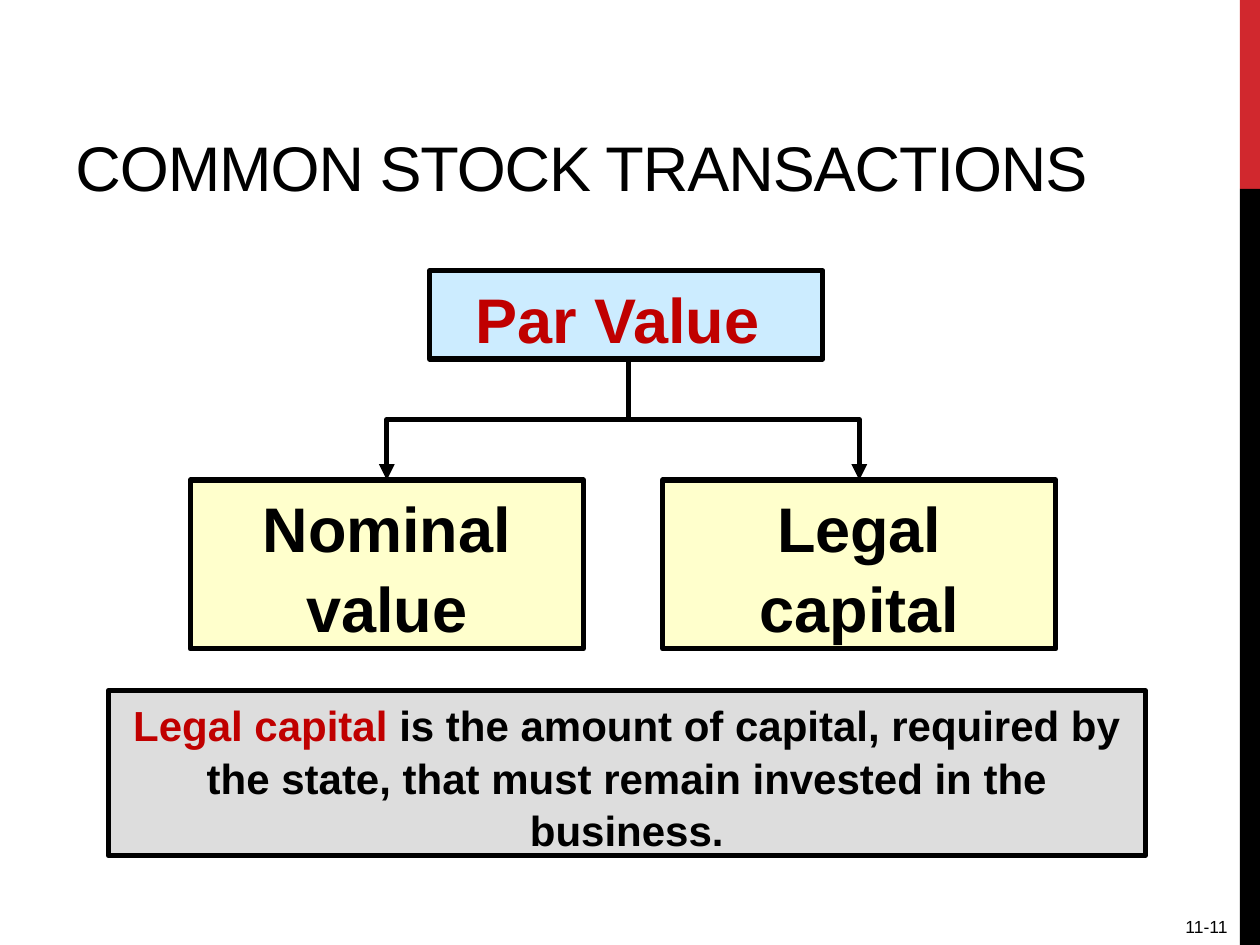
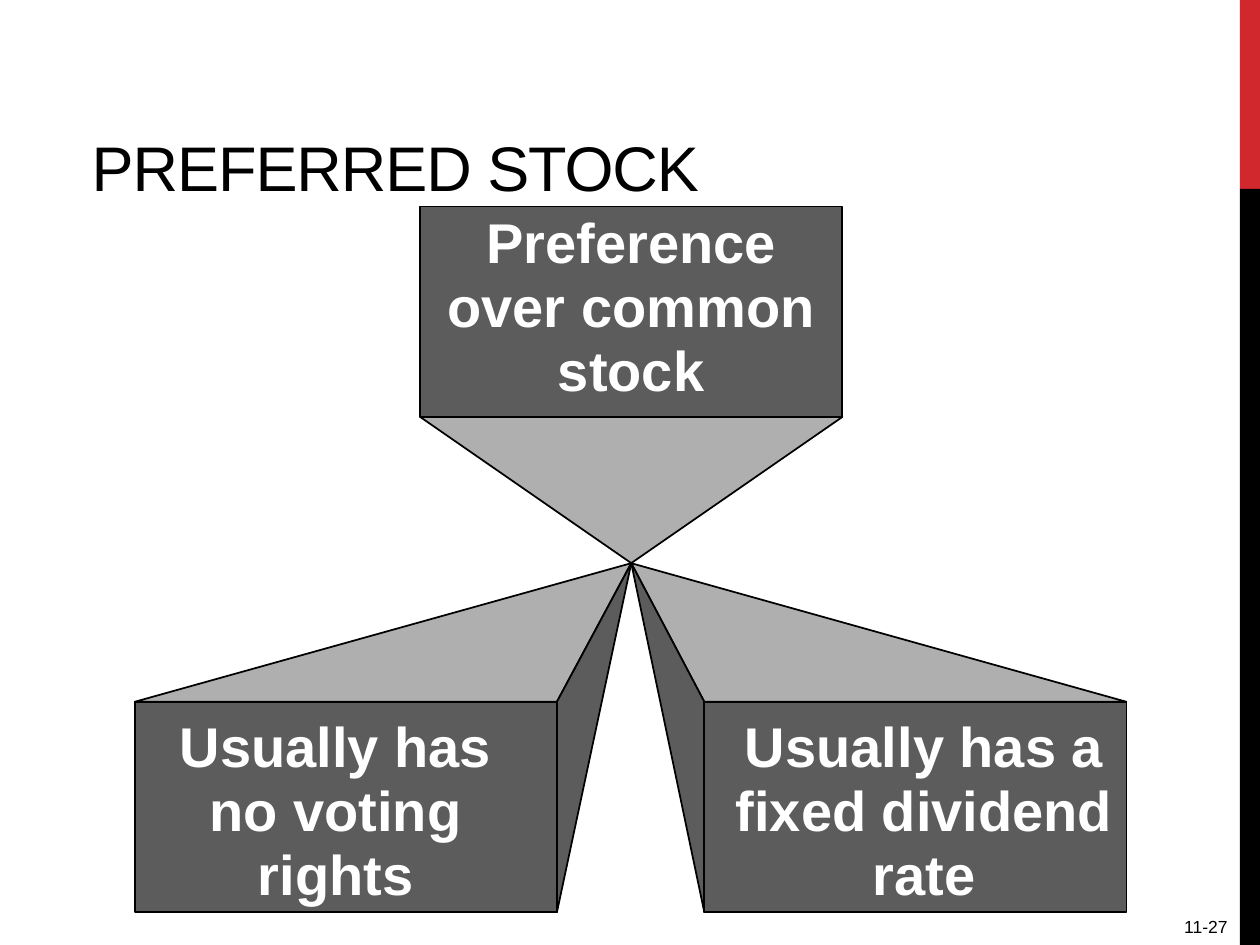
import pptx
import pptx.util
import pptx.dml.color
import pptx.enum.shapes
import pptx.enum.text
import lxml.etree

Inches = pptx.util.Inches
Pt = pptx.util.Pt
ALIGN = pptx.enum.text.PP_ALIGN
RECT = pptx.enum.shapes.MSO_SHAPE.RECTANGLE
ELBOW = pptx.enum.shapes.MSO_CONNECTOR.ELBOW
BLACK, WHITE, RED, BAND = "000000", "FFFFFF", "C00000", "D1282E"
SKY, CREAM, GREY = "CCECFF", "FFFFCC", "DDDDDD"
DARK, LIGHT = "5C5C5C", "AFAFAF"
WIDE, TALL = 3.35, 1.67


def paint(color, hue):
    """Set a color object from a hex string."""
    color.rgb = pptx.dml.color.RGBColor.from_string(hue)


def dress(shape, fill, line=None, width=1):
    """Give a shape its fill and outline, without shadow."""
    shape.shadow.inherit = False
    shape.fill.solid()
    paint(shape.fill.fore_color, fill)
    if line:
        paint(shape.line.color, line)
        shape.line.width = Pt(width)
    else:
        shape.line.fill.background()


def style(run, size, hue, bold):
    """Format one run."""
    run.font.name = "Arial"
    run.font.size = Pt(size)
    run.font.bold = bold
    paint(run.font.color, hue)


def write(shape, text, size, hue=BLACK, bold=True, align=ALIGN.CENTER, lead=1.05):
    """Fill a shape with one formatted paragraph."""
    frame = shape.text_frame
    frame.word_wrap = True
    frame.vertical_anchor = pptx.enum.text.MSO_ANCHOR.TOP
    frame.text = text
    para = frame.paragraphs[0]
    para.alignment = align
    para.line_spacing = lead
    for run in para.runs:
        style(run, size, hue, bold)
    return para


def label(slide, box, text, size, **look):
    """Add a text box."""
    shape = slide.shapes.add_textbox(*map(Inches, box))
    return shape, write(shape, text, size, **look)


def panel(slide, box, fill, text, size, hue=BLACK):
    """Add a filled box with a thick black outline."""
    shape = slide.shapes.add_shape(RECT, *map(Inches, box))
    dress(shape, fill, BLACK, 3)
    return write(shape, text, size, hue)


def base(deck, title, number, indent=0):
    """Start a slide with its side bands, title and number."""
    slide = deck.slides.add_slide(deck.slide_layouts[6])
    for top, high, hue in ((0, 1.5, BAND), (1.5, 6, BLACK)):
        band = slide.shapes.add_shape(RECT, *map(Inches, (9.84, top, 0.16, high)))
        dress(band, hue)
    head, para = label(slide, (0.5 + indent, 0.17, 9.17 - indent, 1.5), title, 36,
                       bold=False, align=ALIGN.LEFT, lead=1)
    head.text_frame.vertical_anchor = pptx.enum.text.MSO_ANCHOR.BOTTOM
    para.runs[0].font._element.set("spc", "-60")
    label(slide, (8.92, 7.22, 0.92, 0.28), number, 10,
          bold=False, align=ALIGN.RIGHT, lead=1)
    return slide


def branch(slide, start, end):
    """Draw a bent arrow that leaves and arrives vertically."""
    (left, top), (right, low) = start, end
    midx, midy = (left + right) / 2, (top + low) / 2
    side = 1 if right > left else -1
    reach, drop = abs(right - left) / 2, (low - top) / 2
    line = slide.shapes.add_connector(
        ELBOW, Inches(midx + side * drop), Inches(midy - reach),
        Inches(midx - side * drop), Inches(midy + reach))
    paint(line.line.color, BLACK)
    line.line.width = Pt(3)
    props = line._element.spPr
    props.xfrm.set("rot", str((270 if side > 0 else 90) * 60000))
    space = pptx.oxml.ns.qn
    tail = lxml.etree.SubElement(props.find(space("a:ln")), space("a:tailEnd"))
    tail.set("type", "triangle")
    lxml.etree.SubElement(props, space("a:effectLst"))


def tree(slide, left, top):
    """Draw the par value box with its two meanings below."""
    wide, high, gap, row = 3.12, 0.7, 3.75, 1.66
    panel(slide, (left + 1.9, top, wide, high), SKY, "Par Value ", 36, RED)
    for col, text in enumerate(("Nominal value", "Legal capital")):
        edge = left + col * gap
        panel(slide, (edge, top + row, wide, 1.34), CREAM, text, 36)
        branch(slide, (left + 3.48, top + high), (edge + wide / 2, top + row))


def note(slide, box):
    """Define legal capital in a grey box."""
    para = panel(slide, box, GREY, "Legal capital ", 24, RED)
    run = para.add_run()
    run.text = ("is the amount of capital, required by the state, "
                "that must remain invested in the business.")
    style(run, 24, BLACK, True)


def facet(slide, points, fill):
    """Draw a closed outline through points."""
    spots = [(Inches(x), Inches(y)) for x, y in points]
    pen = slide.shapes.build_freeform(*spots[0])
    pen.add_line_segments(spots[1:], close=True)
    dress(pen.convert_to_shape(), fill, BLACK)


def block(slide, left, top, tip, text, shift):
    """Draw a block whose faces recede to the tip."""
    right, low = left + WIDE, top + TALL
    edge = low if tip[1] > low else top
    facet(slide, [(left, edge), tip, (right, edge)], LIGHT)
    if not left < tip[0] < right:
        near = right if tip[0] > right else left
        facet(slide, [(near, top), tip, (near, low)], DARK)
    facet(slide, [(left, low), (left, top), (right, top), (right, low)], DARK)
    label(slide, (left + shift[0], top + shift[1], 3.43, 1.55), text, 32,
          hue=WHITE, lead=0.95)


def rays(slide, x, y):
    """Draw three blocks around the tip at x, y."""
    tip = (x, y)
    block(slide, x - WIDE / 2, y - 2.83, tip,
          "Preference over common stock", (-0.04, 0))
    block(slide, x - 0.59 - WIDE, y + 1.1, tip,
          "Usually has\vno voting rights", (-0.12, 0.07))
    block(slide, x + 0.58, y + 1.1, tip,
          "Usually has a fixed dividend rate", (0.03, 0.07))


def main():
    """Build and save the deck."""
    deck = pptx.Presentation()
    deck.slide_width, deck.slide_height = Inches(10), Inches(7.5)
    slide = base(deck, "COMMON STOCK TRANSACTIONS", "11-11")
    note(slide, (0.86, 5.48, 8.23, 1.31))
    tree(slide, 1.51, 2.15)
    slide = base(deck, "PREFERRED STOCK", "11-27", 0.13)
    rays(slide, 5.01, 4.47)
    deck.save("out.pptx")


if __name__ == "__main__":
    main()
